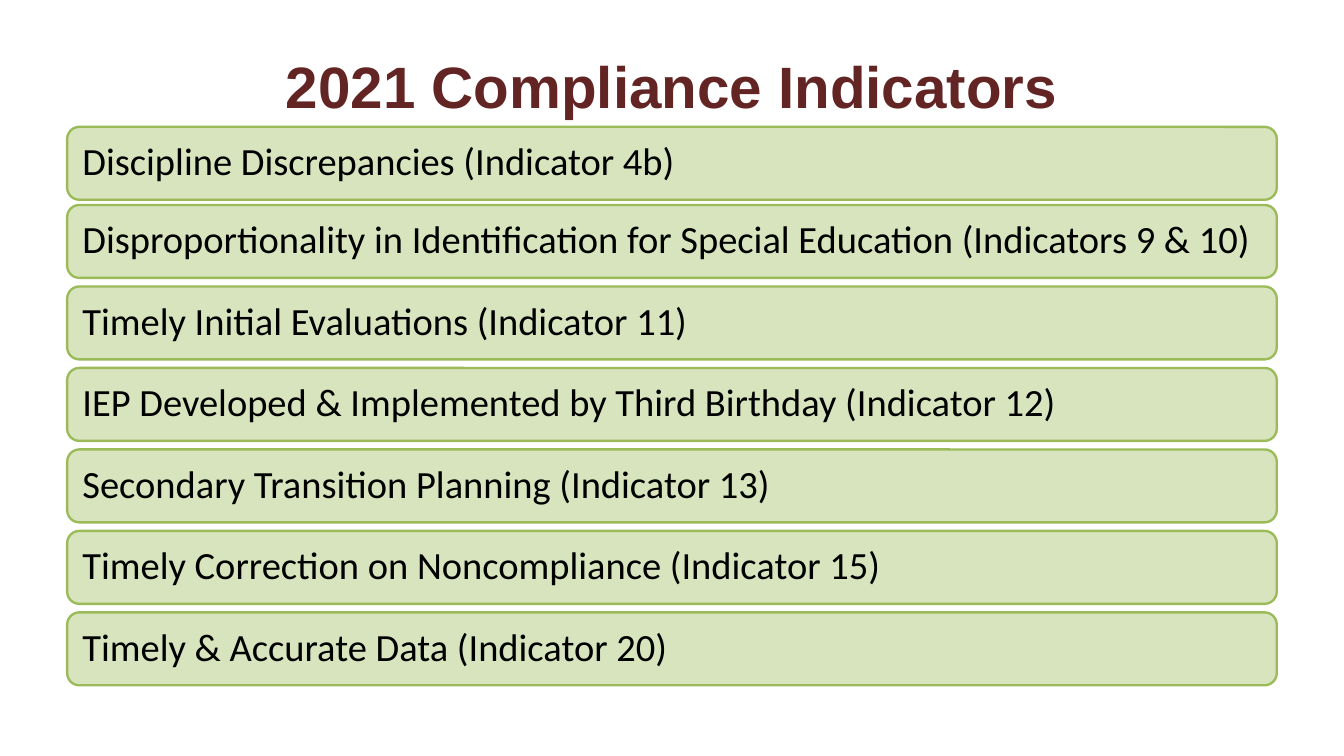
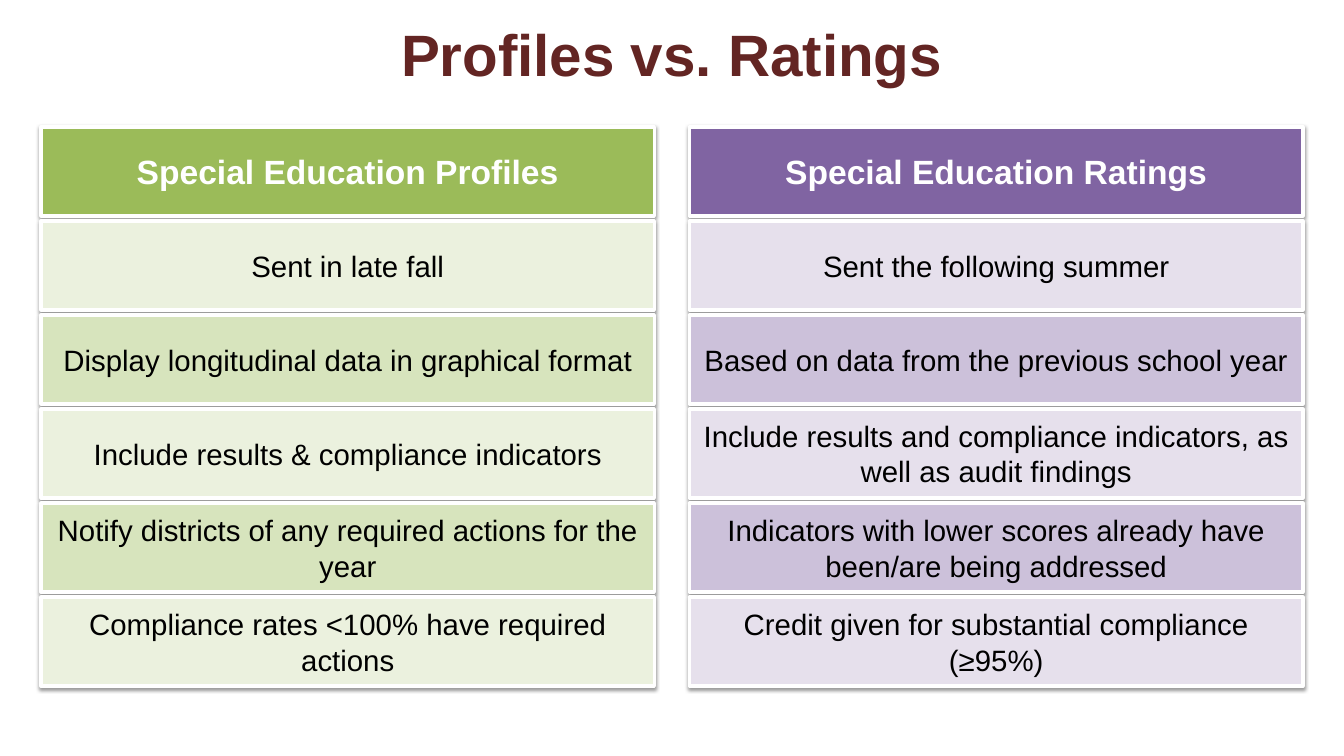
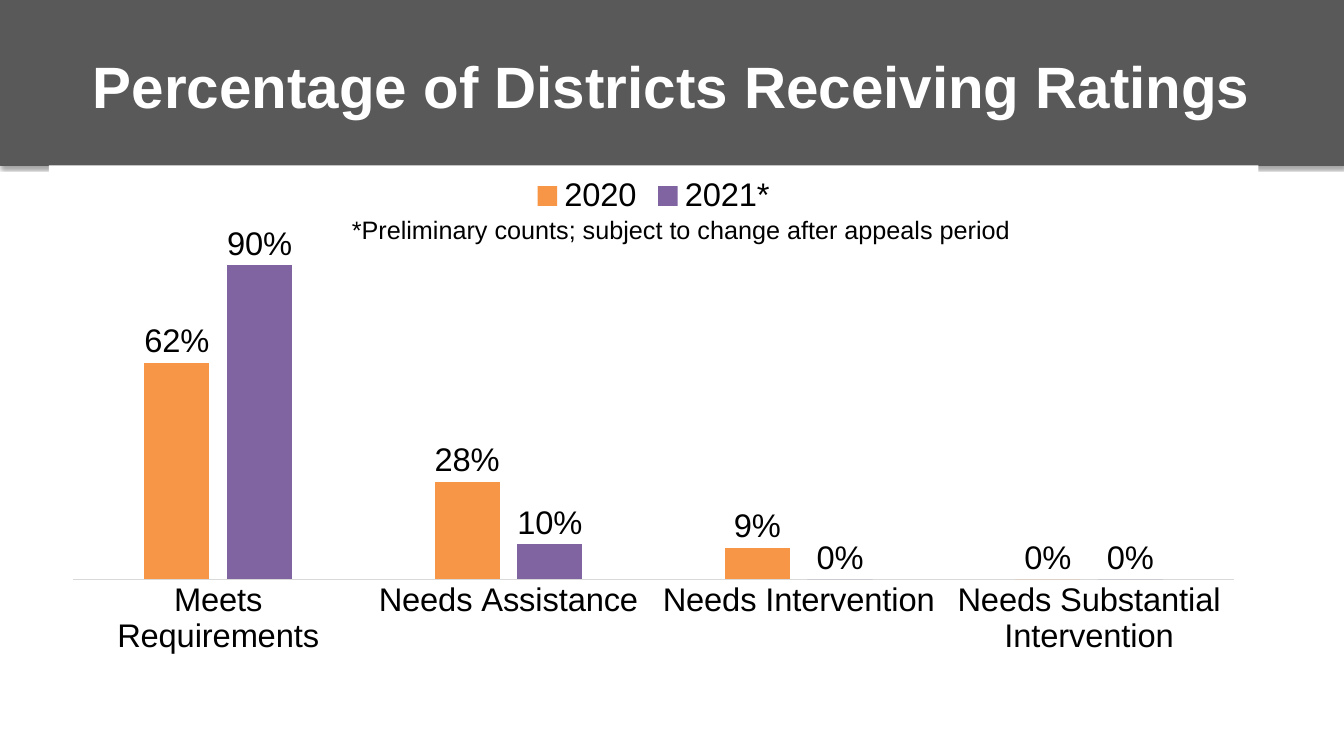
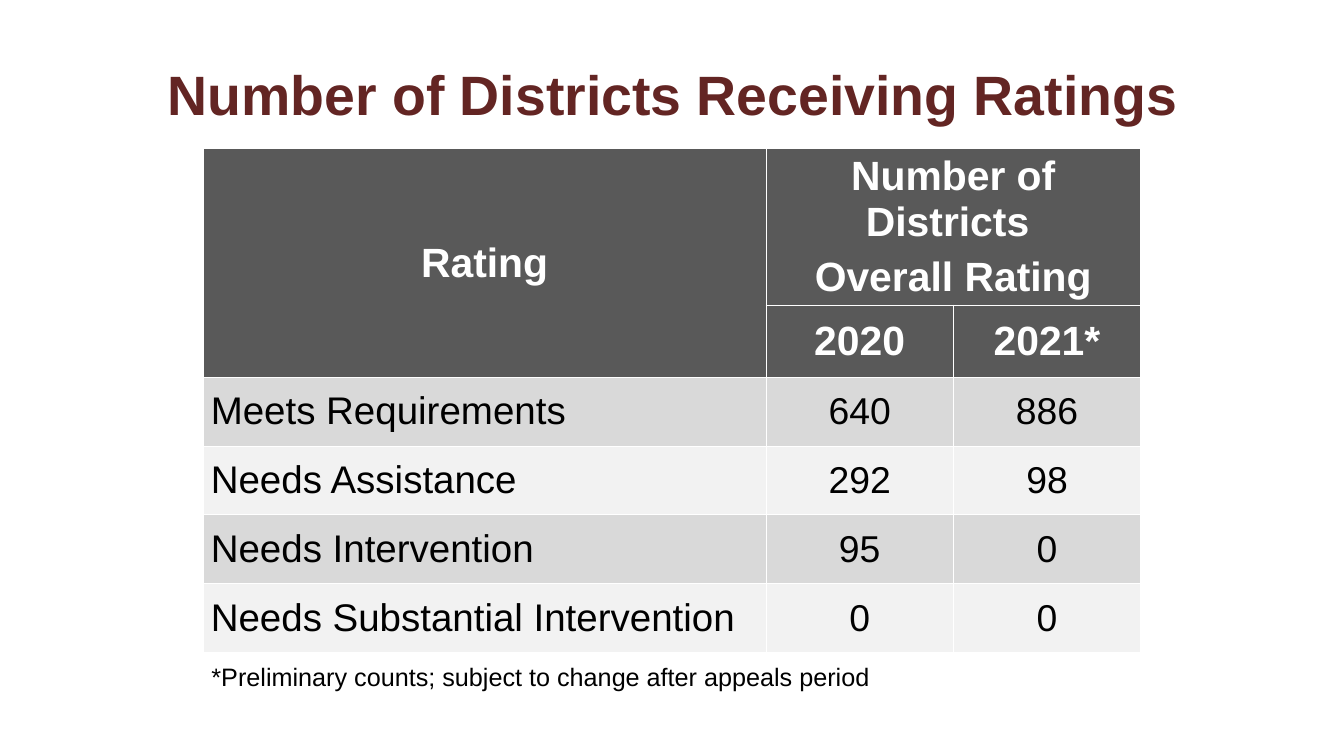
"""Build four slides on special education ratings."""
from dataclasses import dataclass

from pptx import Presentation
from pptx.chart.data import CategoryChartData
from pptx.dml.color import RGBColor
from pptx.enum.chart import (
    XL_CHART_TYPE, XL_LABEL_POSITION, XL_LEGEND_POSITION, XL_TICK_MARK,
)
from pptx.enum.shapes import MSO_SHAPE
from pptx.enum.text import MSO_ANCHOR, PP_ALIGN
from pptx.oxml import parse_xml
from pptx.oxml.ns import nsdecls, qn
from pptx.util import Pt


@dataclass(frozen=True)
class Theme:
    """Hold the colours, fonts and type sizes."""
    wine: str = "632523"
    white: str = "FFFFFF"
    black: str = "000000"
    grey: str = "595959"
    rule: str = "D9D9D9"
    mist: str = "F2F2F2"
    green: str = "9BBB59"
    leaf: str = "D7E4BD"
    pale: str = "EBF1DE"
    plum: str = "8064A2"
    mauve: str = "CCC1DA"
    lilac: str = "E6E0EC"
    gold: str = "F79646"
    sans: str = "Arial"
    soft: str = "Calibri"
    title: float = 50
    title_low: float = 47.5
    bar: float = 33
    head: float = 28.8
    card: float = 25.2
    chart: float = 28
    note: float = 21.6
    table_head: float = 35
    count: float = 32


THEME = Theme()
TITLE_BOX = (57.6, 43.2, 1036.8, 60.5)
NOTE = "*Preliminary counts; subject to change after appeals period"
LEVELS = ["Meets Requirements", "Needs Assistance", "Needs Intervention",
          "Needs Substantial Intervention"]
YEARS = ["2020", "2021*"]


def assign(item, values):
    """Set each named value on the item."""
    for name, value in values.items():
        setattr(item, name, value)


def paint(fill, tone):
    """Give a fill one solid colour."""
    fill.solid()
    fill.fore_color.rgb = RGBColor.from_string(tone)


def solid(tone):
    """Return the XML of a solid fill."""
    return f'<a:solidFill><a:srgbClr val="{tone}"/></a:solidFill>'


class Deck:
    """Hold the style and the current slide."""

    def __init__(self, theme):
        """Open an empty wide deck."""
        self.theme = theme
        self.show = Presentation()
        assign(self.show, {"slide_width": Pt(1152), "slide_height": Pt(648)})
        self.slide = None

    def start(self):
        """Add a blank slide."""
        self.slide = self.show.slides.add_slide(self.show.slide_layouts[6])

    def style(self, font, size, tone=None, bold=False, face=None):
        """Set the look of a font."""
        assign(font, {"name": face or self.theme.sans, "size": Pt(size),
                      "bold": bold})
        font.color.rgb = RGBColor.from_string(tone or self.theme.black)

    def letter(self, frame, lines, look, **form):
        """Put styled lines into a text frame."""
        frame.word_wrap = True
        for spot, line in enumerate(lines):
            para = frame.add_paragraph() if spot else frame.paragraphs[0]
            para.text = line
            assign(para, form)
            self.style(para.runs[0].font, **look)

    def text(self, box, words, look, inset=None, **form):
        """Add a text box."""
        frame = self.slide.shapes.add_textbox(*map(Pt, box)).text_frame
        if inset is not None:
            self.inset(frame, inset)
        self.letter(frame, [words], look, **form)

    def inset(self, item, side, ends=None):
        """Set the margins of a frame or a cell."""
        ends = side if ends is None else ends
        assign(item, {"margin_left": Pt(side), "margin_right": Pt(side),
                      "margin_top": Pt(ends), "margin_bottom": Pt(ends)})

    def title(self, words, box=TITLE_BOX, tone=None, size=None):
        """Add the slide title."""
        look = {"size": size or self.theme.title,
                "tone": tone or self.theme.wine, "bold": True}
        self.text(box, words, look, inset=0, alignment=PP_ALIGN.CENTER)

    def note(self, box):
        """Add the note on early counts."""
        self.text(box, NOTE, {"size": self.theme.note})

    def block(self, kind, box, fill, edge, width):
        """Add a filled and outlined shape."""
        shape = self.slide.shapes.add_shape(kind, *map(Pt, box))
        shape.shadow.inherit = False
        paint(shape.fill, fill)
        paint(shape.line.fill, edge)
        shape.line.width = Pt(width)
        shape.text_frame.vertical_anchor = MSO_ANCHOR.MIDDLE
        return shape

    def shade(self, shape, depth, drop):
        """Cast a soft shadow below a shape."""
        shape.element.spPr.find(qn("a:effectLst")).append(parse_xml(
            f'<a:outerShdw {nsdecls("a")} blurRad="{Pt(3.1)}" '
            f'dist="{Pt(drop)}" dir="5400000" rotWithShape="0">'
            f'<a:srgbClr val="000000"><a:alpha val="{depth * 1000}"/>'
            '</a:srgbClr></a:outerShdw>'))

    def bar(self, top, words):
        """Add a rounded bar with its label."""
        look = self.theme
        shape = self.block(MSO_SHAPE.ROUNDED_RECTANGLE,
                           (57.6, top, 1036.8, 62.5), look.leaf, look.green, 2)
        self.inset(shape.text_frame, 10)
        self.letter(shape.text_frame, [words],
                    {"size": look.bar, "face": look.soft},
                    alignment=PP_ALIGN.LEFT, line_spacing=0.9)

    def stack(self, left, tones, words):
        """Add a headed column of cards."""
        look = self.theme
        for row, line in enumerate(words):
            tone = tones[0] if row == 0 else tones[2 - row % 2]
            shape = self.block(MSO_SHAPE.RECTANGLE,
                               (left, 108.7 + 80.64 * row, 525.6, 76.3),
                               tone, look.white, 3)
            self.shade(shape, 38, 1.6)
            kind = ({"size": look.card} if row else
                    {"size": look.head, "tone": look.white, "bold": True})
            self.letter(shape.text_frame, [line], kind,
                        alignment=PP_ALIGN.CENTER)

    def band(self):
        """Add the dark band behind a title."""
        grey = self.theme.grey
        shape = self.block(MSO_SHAPE.RECTANGLE, (0, 0, 1152, 141.8),
                           grey, grey, 0.75)
        self.shade(shape, 35, 1.8)

    def chart(self, box, names, series):
        """Add a column chart of shares."""
        look = self.theme
        data = CategoryChartData(number_format="0%")
        data.categories = names
        for name, (values, _) in series.items():
            data.add_series(name, values)
        chart = self.slide.shapes.add_chart(
            XL_CHART_TYPE.COLUMN_CLUSTERED, *map(Pt, box), data).chart
        chart.element.find(qn("c:chart")).addnext(parse_xml(
            f'<c:spPr {nsdecls("c", "a")}>{solid(look.white)}'
            '<a:ln><a:noFill/></a:ln></c:spPr>'))
        self.style(chart.font, look.chart)
        assign(chart, {"has_title": False, "has_legend": True})
        assign(chart.legend, {"position": XL_LEGEND_POSITION.TOP,
                              "include_in_layout": False})
        self.style(chart.legend.font, look.chart)
        assign(chart.value_axis, {
            "minimum_scale": 0, "maximum_scale": 1, "visible": False,
            "has_major_gridlines": False})
        axis = chart.category_axis
        axis.major_tick_mark = XL_TICK_MARK.NONE
        self.style(axis.tick_labels.font, look.chart)
        paint(axis.format.line.fill, look.rule)
        axis.format.line.width = Pt(0.75)
        plot = chart.plots[0]
        assign(plot, {"gap_width": 219, "overlap": -27,
                      "vary_by_categories": False})
        for part, (_, tone) in zip(plot.series, series.values()):
            paint(part.format.fill, tone)
            assign(part.data_labels, {
                "show_value": True, "number_format": "0%",
                "number_format_is_linked": False,
                "position": XL_LABEL_POSITION.OUTSIDE_END})
            self.style(part.data_labels.font, look.chart)

    def cell(self, cell, tone):
        """Set the fill, edges and margins of a cell."""
        for side in "LRTB":
            cell._tc.get_or_add_tcPr().append(parse_xml(
                f'<a:ln{side} {nsdecls("a")} w="{Pt(1)}">'
                f'{solid(self.theme.white)}</a:ln{side}>'))
        paint(cell.fill, tone)
        self.inset(cell, 6.5, 0)
        cell.vertical_anchor = MSO_ANCHOR.MIDDLE

    def table(self, spot, wide, high, heads, rows):
        """Add a table with a two-row head."""
        look = self.theme
        size = (sum(wide), sum(high))
        table = self.slide.shapes.add_table(
            len(high), len(wide), *map(Pt, spot + size)).table
        assign(table, {"first_row": False, "horz_banding": False})
        for col, width in zip(table.columns, wide):
            col.width = Pt(width)
        for row, height in zip(table.rows, high):
            row.height = Pt(height)
        for row in range(len(high)):
            tone = look.grey if row < 2 else (look.rule, look.mist)[row % 2]
            for col in range(len(wide)):
                self.cell(table.cell(row, col), tone)
        table.cell(0, 0).merge(table.cell(1, 0))
        table.cell(0, 1).merge(table.cell(0, 2))
        bold = {"size": look.table_head, "tone": look.white, "bold": True}
        for (row, col), lines in heads.items():
            frame = table.cell(row, col).text_frame
            self.letter(frame, lines, bold, alignment=PP_ALIGN.CENTER)
            for para in frame.paragraphs[1:]:
                para.space_before = Pt(8)
        for row, values in enumerate(rows, 2):
            for col, value in enumerate(values):
                side = PP_ALIGN.CENTER if col else PP_ALIGN.LEFT
                self.letter(table.cell(row, col).text_frame, [str(value)],
                            {"size": look.count if col else look.bar},
                            alignment=side)


def main():
    """Build and save the deck."""
    deck = Deck(THEME)

    deck.start()
    deck.title("2021 Compliance Indicators")
    deck.bar(108.7, "Discipline Discrepancies (Indicator 4b)")
    bars = [
        "Disproportionality in Identification for Special Education "
        "(Indicators 9 & 10)",
        "Timely Initial Evaluations (Indicator 11)",
        "IEP Developed & Implemented by Third Birthday (Indicator 12)",
        "Secondary Transition Planning (Indicator 13)",
        "Timely Correction on Noncompliance (Indicator 15)",
        "Timely & Accurate Data (Indicator 20)",
    ]
    for row, words in enumerate(bars):
        deck.bar(175.7 + 69.84 * row, words)

    deck.start()
    deck.title("Profiles vs. Ratings", (187.2, 15.8, 777.6, 61.2))
    deck.stack(35.3, (THEME.green, THEME.pale, THEME.leaf), [
        "Special Education Profiles",
        "Sent in late fall",
        "Display longitudinal data in graphical format",
        "Include results & compliance indicators",
        "Notify districts of any required actions for the year",
        "Compliance rates <100% have required actions",
    ])
    deck.stack(591.1, (THEME.plum, THEME.lilac, THEME.mauve), [
        "Special Education Ratings",
        "Sent the following summer",
        "Based on data from the previous school year",
        "Include results and compliance indicators, as well as audit findings",
        "Indicators with lower scores already have been/are being addressed",
        "Credit given for substantial compliance (≥95%)",
    ])

    deck.start()
    deck.band()
    shares = [((0.62, 0.28, 0.09, 0), THEME.gold),
              ((0.9, 0.1, 0, 0), THEME.plum)]
    deck.chart((41.8, 141.8, 1036.8, 427.7), LEVELS, dict(zip(YEARS, shares)))
    deck.title("Percentage of Districts Receiving Ratings", tone=THEME.white)
    deck.note((294.5, 180, 594.7, 33.1))

    deck.start()
    deck.title("Number of Districts Receiving Ratings",
               (72, 51.8, 1009.4, 57.6), size=THEME.title_low)
    heads = {(0, 0): ["Rating"],
             (0, 1): ["Number of Districts ", "Overall Rating"],
             (1, 1): YEARS[:1], (1, 2): YEARS[1:]}
    counts = zip(LEVELS, (640, 292, 95, 0), (886, 98, 0, 0))
    deck.table((174.2, 127.4), (482.4, 160.6, 160.6),
               (127.4, 61.9, 59, 59, 59, 59), heads, counts)
    deck.note((174.2, 563, 784, 33.1))

    deck.show.save("out.pptx")


if __name__ == "__main__":
    main()
